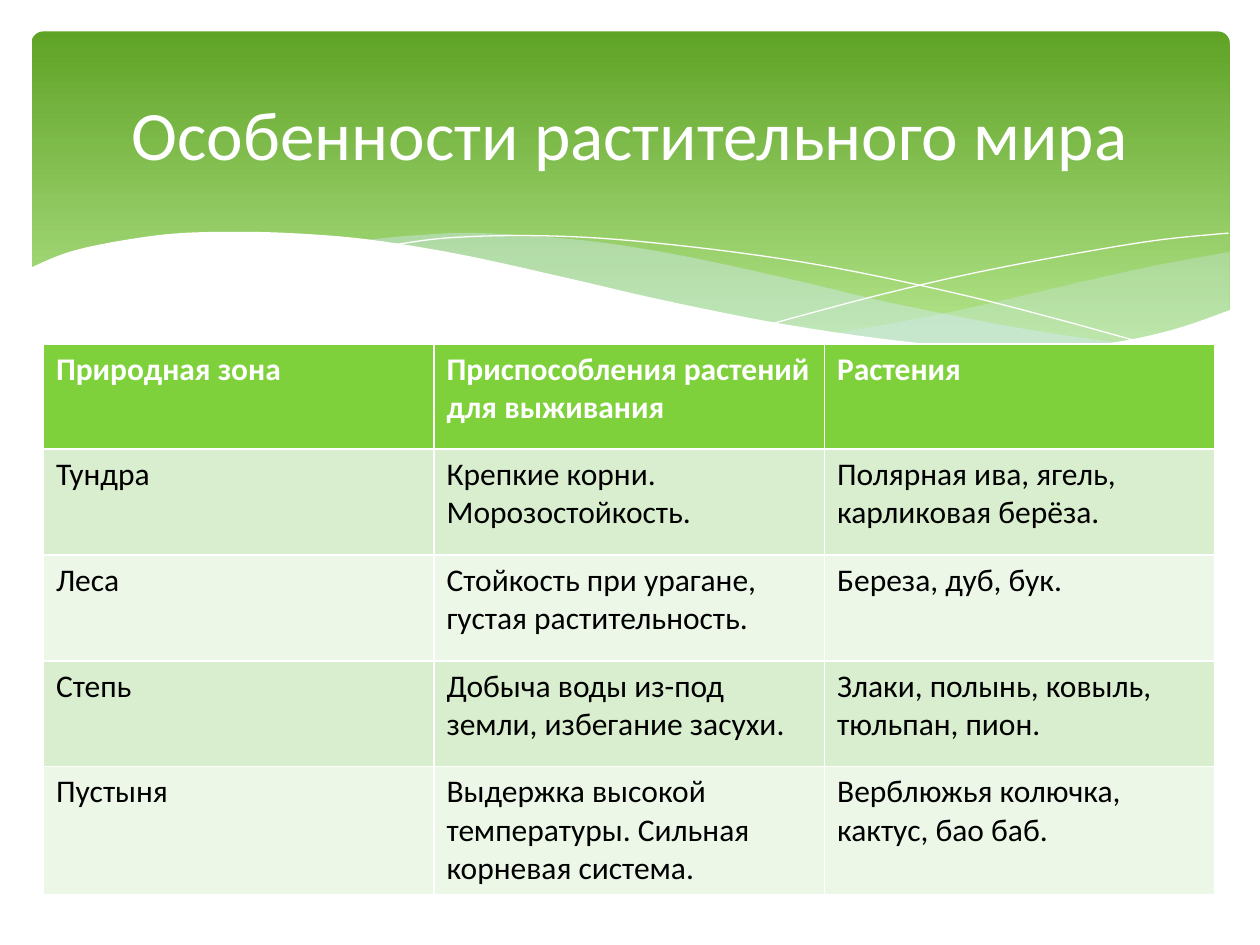
from dataclasses import dataclass

from lxml.etree import SubElement
from pptx import Presentation
from pptx.dml.color import RGBColor as Rgb
from pptx.enum.shapes import MSO_SHAPE as Preset
from pptx.enum.text import MSO_ANCHOR as Anchor, PP_ALIGN as Align
from pptx.oxml.ns import qn
from pptx.util import Pt


@dataclass(frozen=True)
class Theme:
    font: str = "Calibri"
    title: float = 39.6
    body: float = 18
    white: str = "FFFFFF"
    black: str = "000000"
    dark: str = "5FA326"
    light: str = "B2E389"
    mist: str = "D6ECFF"
    head: str = "7FD13B"
    bands: tuple = ("D8EECE", "ECF7E8")


THEME = Theme()

TITLE = "Особенности растительного мира"
ROWS = [
    ("Природная зона", "Приспособления растений для выживания", "Растения"),
    ("Тундра", "Крепкие корни. Морозостойкость.",
     "Полярная ива, ягель, карликовая берёза."),
    ("Леса", "Стойкость при урагане, густая растительность.",
     "Береза, дуб, бук."),
    ("Степь", "Добыча воды из-под земли, избегание засухи.",
     "Злаки, полынь, ковыль, тюльпан, пион."),
    ("Пустыня", "Выдержка высокой температуры. Сильная корневая система.",
     "Верблюжья колючка, кактус, бао баб."),
]
HEIGHTS = (60, 60.5, 60.5, 60.5, 69)

# Knots of the wave curves, in points
RIGHT_TOP = [(702.7, 144), (663, 151.2), (620, 160.6), (542, 178.6), (476, 190.8)]
RIGHT_LOW = [(476, 190.8), (527, 197.3), (578, 200), (628, 197.3),
             (668, 189.4), (702.7, 177.8)]
LEFT_TOP = [(643, 196.6), (581, 187.2), (508, 172.8), (453, 159.8), (390, 146.2),
            (335, 137.5), (274, 133.2), (236, 134.6), (206, 137.5)]
LEFT_LOW = [(206, 137.5), (261, 146.2), (323, 159.8), (382, 172.8), (433, 183.6),
            (490, 193), (539, 198.7), (581, 200), (611, 199.4), (643, 196.6)]
FALL = [(222.5, 140.4), (254, 136.1), (299.5, 134.6), (352, 136.8), (419, 144),
        (479, 153.4), (547, 167.8), (598, 180.7), (653, 195.8)]
RISE = [(441, 185), (500, 169.2), (559, 155.5), (623.5, 143.3), (665, 136.8),
        (702, 133.2)]
EDGE = [(703.4, 177), (669.6, 188.6), (630, 196.6), (582.5, 199.4), (523, 195.8),
        (451, 185.8), (381, 172), (322, 158.4), (263, 145.4), (210, 136.8),
        (165.6, 133.2), (127.4, 132.5), (95, 133.9), (61, 139), (37.4, 144.7),
        (16.6, 153.4)]
FLOOR = [(16.6, 237), (703.4, 237)]


def smooth(knots, steps=6):
    """Return points on a Catmull-Rom curve through the knots."""
    ends = [knots[0], *knots, knots[-1]]
    curve = [knots[0]]
    for a, b, c, d in zip(ends, ends[1:], ends[2:], ends[3:]):
        for step in range(1, steps + 1):
            t = step / steps
            curve.append(tuple(
                (2 * q + (r - p) * t + (2 * p - 5 * q + 4 * r - s) * t ** 2
                 + (3 * q - p - 3 * r + s) * t ** 3) / 2
                for p, q, r, s in zip(a, b, c, d)))
    return curve


def trace(shapes, points, close):
    spots = [(Pt(x), Pt(y)) for x, y in points]
    pen = shapes.build_freeform(*spots[0])
    pen.add_line_segments(spots[1:], close=close)
    shape = pen.convert_to_shape()
    shape.shadow.inherit = False
    return shape


def add_wave(shapes, points, color, alpha=100):
    wave = trace(shapes, points, True)
    wave.line.fill.background()
    wave.fill.solid()
    wave.fill.fore_color.rgb = Rgb.from_string(color)
    if alpha < 100:
        tint = next(wave.element.spPr.iter(qn("a:srgbClr")))
        SubElement(tint, qn("a:alpha"), val=str(alpha * 1000))


def add_curve(shapes, knots):
    curve = trace(shapes, smooth(knots), False)
    curve.fill.background()
    curve.line.color.rgb = Rgb.from_string(THEME.white)
    curve.line.width = Pt(0)


def add_banner(shapes):
    banner = shapes.add_shape(Preset.ROUNDED_RECTANGLE,
                              Pt(18), Pt(18), Pt(684.7), Pt(194.4))
    banner.adjustments[0] = 0.034
    banner.shadow.inherit = False
    banner.line.fill.background()
    banner.fill.gradient()
    banner.fill.gradient_angle = 270
    stops = zip(banner.fill.gradient_stops, (0, 0.9), (THEME.dark, THEME.light))
    for stop, place, color in stops:
        stop.position = place
        stop.color.rgb = Rgb.from_string(color)


def write(frame, text, size, color, bold=False):
    run = frame.paragraphs[0].add_run()
    run.text = text
    font = run.font
    font.name, font.size, font.bold = THEME.font, Pt(size), bold
    font.color.rgb = Rgb.from_string(color)


def set_title(title):
    title.left, title.top = Pt(36), Pt(26.6)
    title.width, title.height = Pt(648), Pt(98.6)
    frame = title.text_frame
    frame.word_wrap = True
    frame.vertical_anchor = Anchor.MIDDLE
    write(frame, TITLE, THEME.title, THEME.white)
    frame.paragraphs[0].alignment = Align.CENTER
    title.element.getparent().append(title.element)  # bring to front


def add_grid(shapes):
    grid = shapes.add_table(len(ROWS), len(ROWS[0]), Pt(24.8), Pt(196.6),
                            Pt(669.6), Pt(sum(HEIGHTS))).table
    for i, (texts, height) in enumerate(zip(ROWS, HEIGHTS)):
        grid.rows[i].height = Pt(height)
        head = i == 0
        fill = THEME.head if head else THEME.bands[(i - 1) % 2]
        ink = THEME.white if head else THEME.black
        for j, text in enumerate(texts):
            cell = grid.cell(i, j)
            cell.fill.solid()
            cell.fill.fore_color.rgb = Rgb.from_string(fill)
            write(cell.text_frame, text, THEME.body, ink, head)


def main():
    deck = Presentation()
    deck.slide_width, deck.slide_height = Pt(720), Pt(540)
    slide = deck.slides.add_slide(deck.slide_layouts.get_by_name("Title Only"))
    shapes = slide.shapes
    add_banner(shapes)
    add_wave(shapes, smooth(RIGHT_TOP) + smooth(RIGHT_LOW), THEME.mist, 29)
    add_wave(shapes, smooth(LEFT_TOP) + smooth(LEFT_LOW), THEME.mist, 40)
    add_curve(shapes, FALL)
    add_curve(shapes, RISE)
    add_wave(shapes, smooth(EDGE) + FLOOR, THEME.white)
    add_grid(shapes)
    set_title(shapes.title)
    deck.save("out.pptx")


if __name__ == "__main__":
    main()
